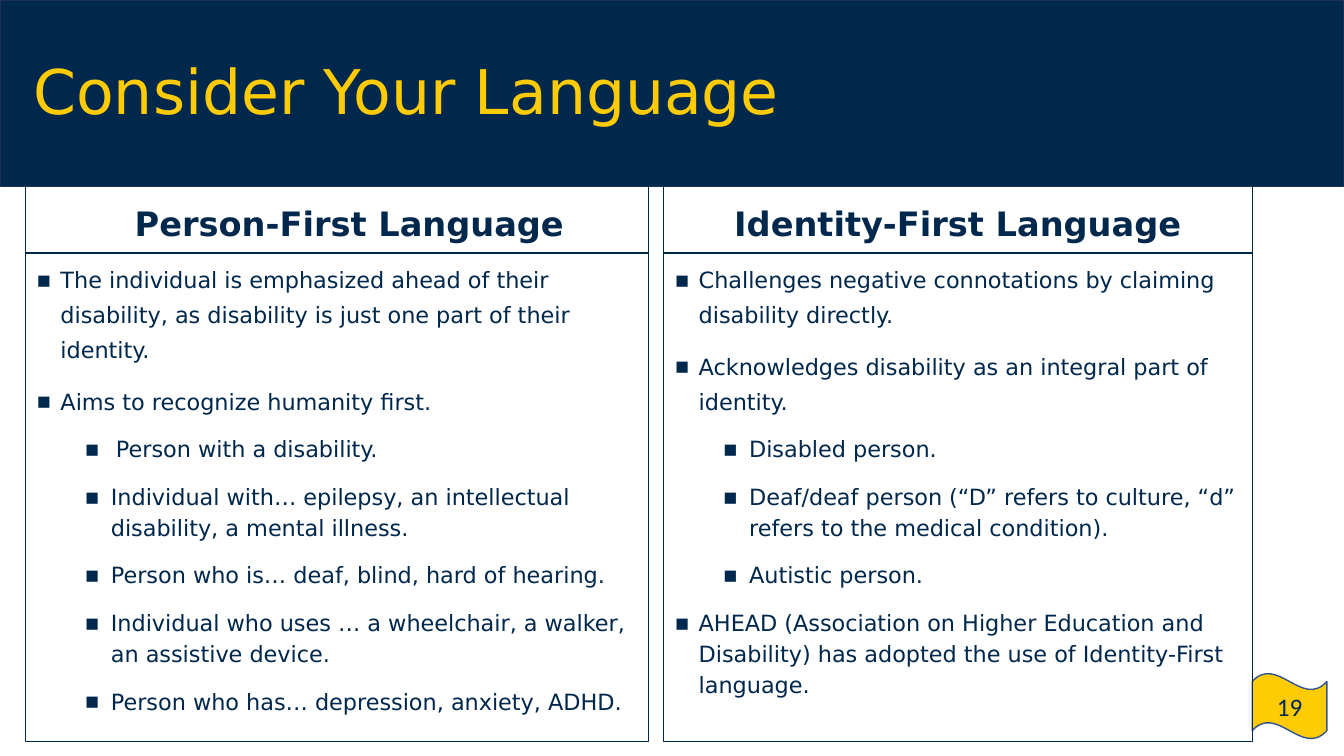
from lxml import etree
from pptx import Presentation
from pptx import util as u
from pptx.dml.color import RGBColor
from pptx.enum import shapes, text
from pptx.oxml.ns import qn

NAVY, MAIZE = "00274C", "FFCB05"
FONT = "DejaVu Sans"
WIDTH, HEIGHT = 13.33, 7.5
HEADING_TOP, HEADING_H, LIST_H = 1.84, 0.67, 4.85

# level, left margin, first-line indent, line spacing
POINT = dict(level=0, margin=0.25, indent=-0.24, spacing=1.3)
TIGHT_POINT = dict(POINT, spacing=1.15)
EXAMPLE = dict(level=1, margin=0.75, indent=-0.26, spacing=1.15)
WIDE_EXAMPLE = dict(EXAMPLE, margin=0.8, indent=-0.31)

PERSON_FIRST = [
    ("The individual is emphasized ahead of their disability, as disability "
     "is just one part of their identity.", POINT),
    ("Aims to recognize humanity first.", POINT),
    ("Person with a disability.", WIDE_EXAMPLE),
    ("Individual with… epilepsy, an intellectual disability, a mental illness.", EXAMPLE),
    ("Person who is… deaf, blind, hard of hearing.", EXAMPLE),
    ("Individual who uses … a wheelchair, a walker, an assistive device.", EXAMPLE),
    ("Person who has… depression, anxiety, ADHD.", EXAMPLE),
]
IDENTITY_FIRST = [
    ("Challenges negative connotations by claiming disability directly.", POINT),
    ("Acknowledges disability as an integral part of identity.", POINT),
    ("Disabled person.", EXAMPLE),
    ("Deaf/deaf person (“D” refers to culture, “d” refers to the medical condition).", EXAMPLE),
    ("Autistic person.", EXAMPLE),
    ("AHEAD (Association on Higher Education and Disability) has adopted the "
     "use of Identity-First language.", TIGHT_POINT),
]


def color(hex_value):
    return RGBColor.from_string(hex_value)


def set_all(target, values):
    for name, value in values.items():
        setattr(target, name, value)


def place(shape, left, top, width, height):
    set_all(shape, dict(left=u.Inches(left), top=u.Inches(top),
                        width=u.Inches(width), height=u.Inches(height)))


def outline(shape, hex_value, points):
    shape.line.color.rgb = color(hex_value)
    shape.line.width = u.Pt(points)


def set_frame(shape, anchor):
    set_all(shape.text_frame, dict(
        word_wrap=True, auto_size=text.MSO_AUTO_SIZE.NONE, vertical_anchor=anchor,
        margin_left=u.Inches(0.1), margin_right=u.Inches(0.1),
        margin_top=u.Inches(0.05), margin_bottom=u.Inches(0.05)))


def write(paragraph, words, size, hex_value=NAVY, font=FONT, bold=False,
          align=text.PP_ALIGN.LEFT, spacing=1.0, before=0):
    set_all(paragraph, dict(alignment=align, line_spacing=spacing,
                            space_before=u.Pt(before), space_after=u.Pt(0)))
    run = paragraph.add_run()
    run.text = words
    set_all(run.font, dict(name=font, size=u.Pt(size), bold=bold))
    run.font.color.rgb = color(hex_value)


def set_indent(paragraph, margin, indent):
    properties = paragraph._p.get_or_add_pPr()
    properties.set("marL", str(u.Inches(margin)))
    properties.set("indent", str(u.Inches(indent)))
    return properties


def add_bullet(paragraph, margin, indent):
    properties = set_indent(paragraph, margin, indent)
    bullet_color = etree.SubElement(properties, qn("a:buClr"))
    etree.SubElement(bullet_color, qn("a:srgbClr"), val=NAVY)
    etree.SubElement(properties, qn("a:buFont"), typeface=FONT)
    etree.SubElement(properties, qn("a:buChar"), char="▪")


def add_backdrop(slide, preset, box, fill, line):
    """Add a filled shape behind the placeholders."""
    shape = slide.shapes.add_shape(preset, *map(u.Inches, box))
    shape.shadow.inherit = False
    shape.fill.solid()
    shape.fill.fore_color.rgb = color(fill)
    outline(shape, line, 1)
    slide.shapes._spTree.insert(2, shape._element)
    return shape


def build_banner(slide):
    add_backdrop(slide, shapes.MSO_SHAPE.RECTANGLE, (0, 0, WIDTH, 1.85), NAVY, "1C3052")
    title = slide.shapes.title
    place(title, 0.23, 0.21, 11.5, 1.45)
    set_frame(title, text.MSO_ANCHOR.MIDDLE)
    write(title.text_frame.paragraphs[0], "Consider Your Language", 44, MAIZE, spacing=0.9)


def build_page_number(slide):
    flag = add_backdrop(slide, shapes.MSO_SHAPE.WAVE, (12.42, 6.68, 0.74, 0.65), MAIZE, "31538F")
    set_frame(flag, text.MSO_ANCHOR.MIDDLE)
    write(flag.text_frame.paragraphs[0], "19", 18, font="Calibri", align=text.PP_ALIGN.CENTER)


def build_column(heading, points_box, left, width, name, points, heading_indent):
    place(heading, left, HEADING_TOP, width, HEADING_H)
    place(points_box, left, HEADING_TOP + HEADING_H, width, LIST_H)
    for box, anchor in ((heading, text.MSO_ANCHOR.MIDDLE), (points_box, text.MSO_ANCHOR.TOP)):
        outline(box, NAVY, 0.75)
        set_frame(box, anchor)

    heading_line = heading.text_frame.paragraphs[0]
    set_indent(heading_line, *heading_indent)
    write(heading_line, name, 24, bold=True, align=text.PP_ALIGN.CENTER, spacing=1.2)

    frame = points_box.text_frame
    for number, (words, style) in enumerate(points):
        paragraph = frame.add_paragraph() if number else frame.paragraphs[0]
        paragraph.level = style["level"]
        add_bullet(paragraph, style["margin"], style["indent"])
        write(paragraph, words, 16, spacing=style["spacing"], before=12 if number else 0)


def main():
    deck = Presentation()
    set_all(deck, dict(slide_width=u.Inches(WIDTH), slide_height=u.Inches(HEIGHT)))
    slide = deck.slides.add_slide(deck.slide_layouts.get_by_name("Comparison"))
    parts = slide.placeholders
    build_page_number(slide)
    build_banner(slide)
    build_column(parts[1], parts[2], 0.25, 6.18, "Person-First Language",
                 PERSON_FIRST, (0.5, -0.25))
    build_column(parts[3], parts[4], 6.58, 5.84, "Identity-First Language",
                 IDENTITY_FIRST, (0, 0))
    deck.save("out.pptx")


if __name__ == "__main__":
    main()
